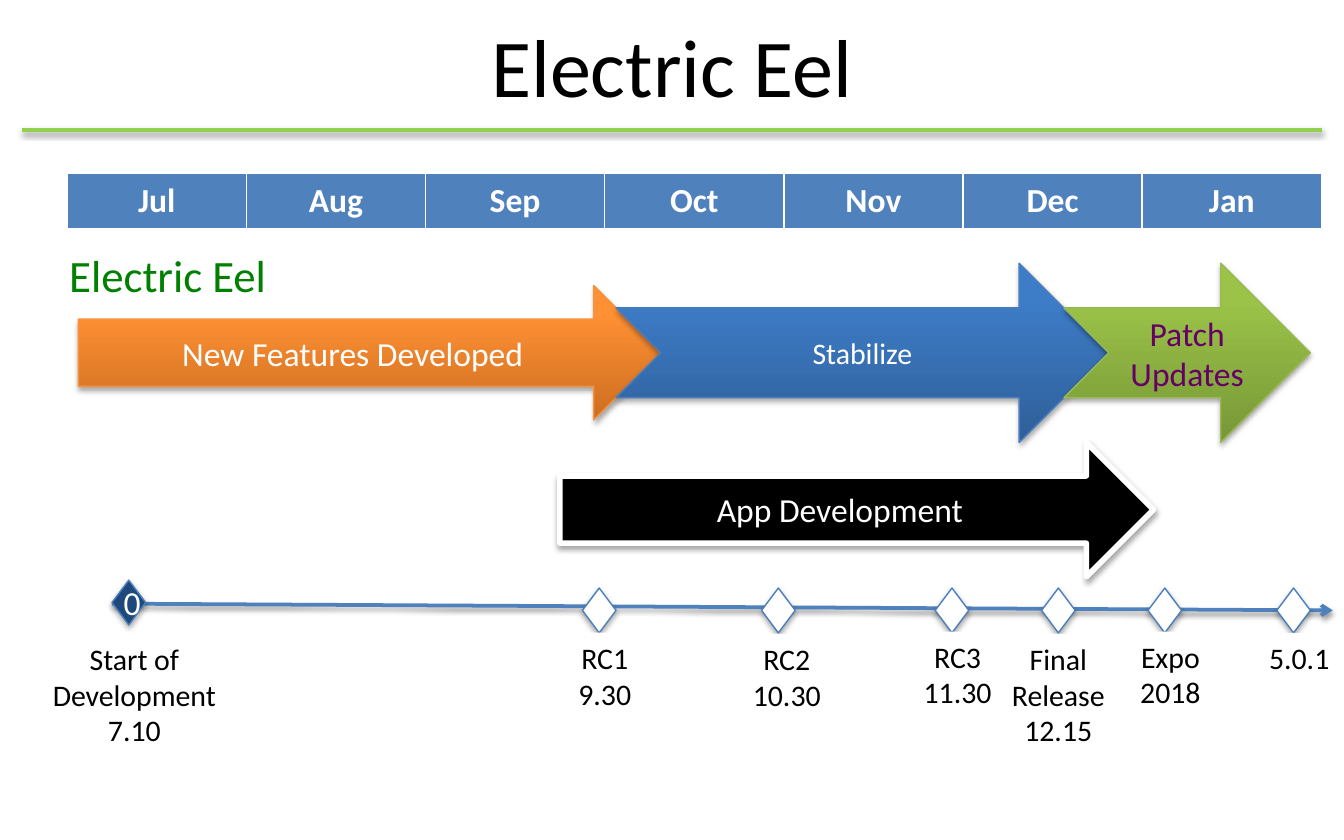
"""Build the Electric Eel release roadmap slide."""
from lxml.etree import SubElement
from pptx import Presentation
from pptx.dml.color import RGBColor
from pptx.enum.shapes import MSO_CONNECTOR, MSO_SHAPE
from pptx.enum.text import MSO_ANCHOR, PP_ALIGN
from pptx.oxml.ns import qn
from pptx.util import Inches, Pt

rgb = RGBColor.from_string
deck = Presentation()
deck.slide_width, deck.slide_height = Inches(10), Inches(6.25)
COL, ROW = deck.slide_width / 120, deck.slide_height / 75


def write(frame, lines, size, color, align=PP_ALIGN.CENTER, bold=False, **frame_format):
    """Fill a text frame with one paragraph per line."""
    for name, value in {"word_wrap": True, **frame_format}.items():
        setattr(frame, name, value)
    frame.text = "\n".join(lines)
    for paragraph in frame.paragraphs:
        paragraph.alignment = align
        for name, value in {"name": "Calibri", "size": Pt(size), "bold": bold}.items():
            setattr(paragraph.font, name, value)
        paragraph.font.color.rgb = rgb(color)


def outline(part, color, width, opacity=35):
    """Give a part its line and a soft shadow below it."""
    part.line.color.rgb = rgb(color)
    part.line.width = Pt(width)
    effects = SubElement(part._element.spPr, qn("a:effectLst"))
    shadow = SubElement(effects, qn("a:outerShdw"), blurRad=str(Pt(3.1)),
                        dist=str(Pt(1.7)), dir="5400000", rotWithShape="0")
    black = SubElement(shadow, qn("a:srgbClr"), val="000000")
    SubElement(black, qn("a:alpha"), val=str(opacity * 1000))


slide = deck.slides.add_slide(deck.slide_layouts[5])
shapes = slide.shapes

title_place = {"left": 6 * COL, "top": 1.5 * ROW, "width": 108 * COL, "height": 8.5 * ROW}
for side, length in title_place.items():
    setattr(shapes.title, side, int(length))
write(shapes.title.text_frame, ["Electric Eel"], 44, "000000",
      vertical_anchor=MSO_ANCHOR.MIDDLE)

title_rule = shapes.add_connector(MSO_CONNECTOR.STRAIGHT, int(2 * COL), int(11.6 * ROW),
                                  int(118 * COL), int(11.6 * ROW))
outline(title_rule, "92D050", 2, 38)

months = ["Jul", "Aug", "Sep", "Oct", "Nov", "Dec", "Jan"]
calendar = shapes.add_table(1, len(months), int(6 * COL), int(15.5 * ROW),
                            int(112 * COL), int(4.9 * ROW)).table
for cell, month in zip(calendar.rows[0].cells, months):
    cell.fill.solid()
    cell.fill.fore_color.rgb = rgb("4F81BD")
    write(cell.text_frame, [month], 18, "FFFFFF", bold=True)

timeline = shapes.add_connector(MSO_CONNECTOR.STRAIGHT, int(10 * COL), int(53.9 * ROW),
                                int(119 * COL), int(54.5 * ROW))
outline(timeline, "4F81BD", 2, 38)
SubElement(timeline.line._get_or_add_ln(), qn("a:tailEnd"), type="arrow")

release_name = shapes.add_textbox(int(5 * COL), int(21.5 * ROW), int(45 * COL), int(6 * ROW))
write(release_name.text_frame, ["Electric Eel"], 24, "008000", PP_ALIGN.LEFT)

PLAIN, NOTCHED = MSO_SHAPE.RIGHT_ARROW, MSO_SHAPE.NOTCHED_RIGHT_ARROW
phases = [
    ("New Features Developed", PLAIN, 7, 25.5, 52, 12, ["CC6E20", "FF9034"], "F69240", 0.75, 18, "FFFFFF"),
    ("Stabilize", NOTCHED, 55, 23.5, 44, 16, ["2F5F99", "3D7CC7"], "4B7EBC", 0.75, 16, "FFFFFF"),
    ("Patch Updates", NOTCHED, 95, 23.5, 22, 16, ["779737", "9BC348"], "98B955", 0.75, 18, "660066"),
    ("App Development", PLAIN, 50, 39.5, 53, 12, ["000000"], "FFFFFF", 3, 18, "FFFFFF"),
]
for name, arrow, col, row, cols, rows, fills, edge, weight, size, ink in phases:
    phase = shapes.add_shape(arrow, int(col * COL), int(row * ROW), int(cols * COL), int(rows * ROW))
    if len(fills) == 1:
        phase.fill.solid()
        phase.fill.fore_color.rgb = rgb(fills[0])
    else:
        phase.fill.gradient()
        phase.fill.gradient_angle = 90
        for stop, color, position in zip(phase.fill.gradient_stops, fills, [0, 0.8]):
            stop.color.rgb = rgb(color)
            stop.position = position
    outline(phase, edge, weight)
    write(phase.text_frame, [name], size, ink, vertical_anchor=MSO_ANCHOR.MIDDLE)

milestones = [
    (["RC1", "9.30"], 52, 52.5, 50, 56.5, 8, 7.7, "FFFFFF"),
    (["RC2", "10.30"], 68, 52.5, 66, 56.6, 8.5, 7.7, "FFFFFF"),
    (["Final Release 12.15"], 93, 52.5, 89, 56.6, 11, 11, "FFFFFF"),
    (["RC3", "11.30"], 83.5, 52.5, 81, 56.4, 9, 7.7, "FFFFFF"),
    (["5.0.1"], 114, 52.5, 112, 56.5, 8, 4.4, "FFFFFF"),
    (["Expo 2018"], 102.5, 52.5, 100, 56.4, 9, 7.7, "FFFFFF"),
    (["Start of Development", "7.10"], 10, 51.8, 3, 56.6, 18, 11, "1F497D"),
]
for lines, mark_col, mark_row, col, row, cols, rows, fill in milestones:
    milestone = shapes.add_group_shape().shapes
    mark = milestone.add_shape(MSO_SHAPE.DIAMOND, int(mark_col * COL), int(mark_row * ROW),
                               int(3 * COL), int(4 * ROW))
    label = milestone.add_textbox(int(col * COL), int(row * ROW), int(cols * COL), int(rows * ROW))
    for part, color in [(mark, fill), (label, "FFFFFF")]:
        part.fill.solid()
        part.fill.fore_color.rgb = rgb(color)
    outline(mark, "4B7EBC", 0.75)
    write(label.text_frame, lines, 16, "000000", margin_left=Inches(0.05), margin_right=Inches(0.05))

write(mark.text_frame, ["0"], 18, "FFFFFF", word_wrap=False, margin_left=Inches(0.05),
      margin_right=0, vertical_anchor=MSO_ANCHOR.MIDDLE)

deck.save("out.pptx")
